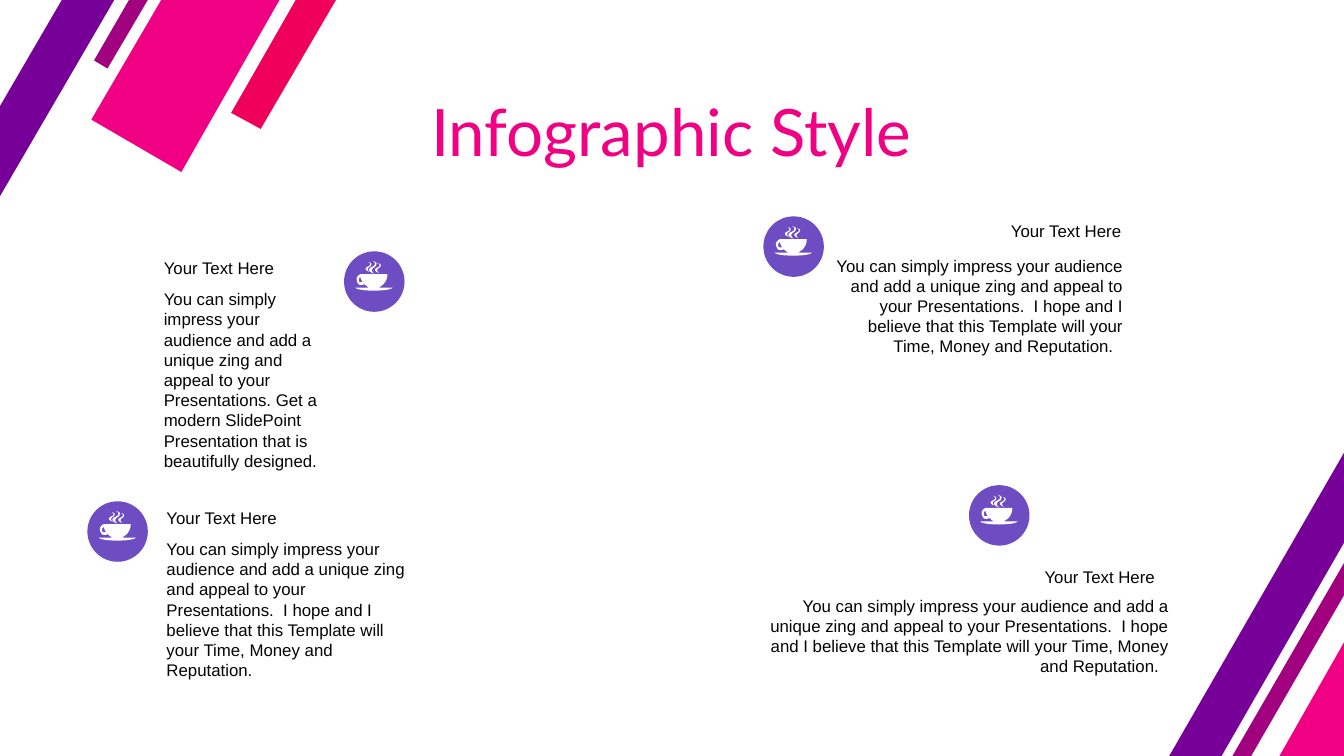
"""Build the "Infographic Style" slide: four captions with cup badges and diagonal stripes."""
from typing import NamedTuple

from pptx import Presentation
from pptx.dml.color import RGBColor
from pptx.enum.shapes import MSO_SHAPE as Shape
from pptx.enum.text import MSO_ANCHOR as Anchor, PP_ALIGN as Align
from pptx.util import Inches, Pt

WIDTH = 10
HEIGHT = WIDTH * 9 / 16
PINK, PURPLE, PLUM, RED = "F00082", "770099", "A1007E", "EF005A"
VIOLET, WHITE, INK = "6E4CC2", "FFFFFF", "040404"
BADGE_SIZE = 0.45
CURVE_STEPS = 6
HEADING = "Your Text Here"
PITCH = "You can simply impress your audience and add a unique zing and appeal to your Presentations."
HOPE = f"{PITCH}  I hope and I believe that this Template will your Time, Money and Reputation."
DESIGN = f"{PITCH} Get a modern SlidePoint  Presentation that is beautifully designed."


class Frame(NamedTuple):
    left: float
    top: float
    width: float
    height: float


class Caption(NamedTuple):
    badge: tuple
    heading: Frame
    body: Frame
    text: str
    align: Align


class Stripe(NamedTuple):
    color: str
    corners: list


class Outline(NamedTuple):
    start: tuple
    segments: list


CAPTIONS = [
    Caption((2.56, 1.87), Frame(1.12, 1.87, 1.45, 0.25), Frame(1.12, 2.1, 1.45, 1.46), DESIGN, Align.LEFT),
    Caption((0.65, 3.73), Frame(1.14, 3.73, 1.99, 0.25), Frame(1.14, 3.96, 1.99, 1.16), HOPE, Align.LEFT),
    Caption((5.68, 1.61), Frame(6.1, 1.59, 2.34, 0.25), Frame(6.1, 1.85, 2.35, 0.86), HOPE + "  ", Align.RIGHT),
    Caption((7.21, 3.61), Frame(6.44, 4.17, 2.25, 0.25), Frame(5.56, 4.38, 3.23, 0.71), HOPE + "  ", Align.RIGHT),
]

STRIPES = [
    Stripe(RED, [(2.2, 0), (2.5, 0), (1.94, 0.96), (1.72, 0.84)]),
    Stripe(PINK, [(1.2, 0), (2.08, 0), (1.35, 1.28), (0.68, 0.89)]),
    Stripe(PLUM, [(0.96, 0), (1.1, 0), (0.8, 0.51), (0.7, 0.45)]),
    Stripe(PURPLE, [(0.46, 0), (0.85, 0), (0, 1.46), (0, 0.79)]),
    Stripe(PINK, [(WIDTH, 4.78), (WIDTH, HEIGHT), (9.52, HEIGHT)]),
    Stripe(PLUM, [(WIDTH, 4.19), (WIDTH, 4.43), (9.31, HEIGHT), (9.17, HEIGHT)]),
    Stripe(PURPLE, [(WIDTH, 3.37), (WIDTH, 4.04), (9.09, HEIGHT), (8.7, HEIGHT)]),
]

HANDLE = Outline((12, 19), [
    (13, 21, 13, 22, 14, 23), (13, 23, 13, 23, 12, 23),
    (11, 23, 11, 22, 11, 21), (11, 20, 12, 19, 12, 19)])
BOWL = Outline((12.3, 17), [
    (10.8, 17.5, 9.8, 18.8, 9.4, 20), (9.2, 22, 10, 24, 11.5, 25),
    (13, 25.3, 14, 25, 15, 24.5), (16, 25, 16.5, 25.7, 17, 26),
    (17.7, 26.5, 18.3, 27, 19, 27), (8.3, 27),
    (9, 28.3, 15, 29.3, 22.2, 29.3), (29.5, 29.3, 35.5, 28.3, 36.2, 27),
    (25.4, 27), (26, 27, 26.8, 26.5, 27.3, 26), (30, 24.5, 32.3, 21, 32.3, 17)])
WISP = Outline((0, 0), [
    (1, 0.5, 1.5, 0.7, 1.4, 1.9), (1.1, 3.5, -2.1, 3.2, -2, 5.2),
    (-1.3, 6.2, -1, 6.6, 0.9, 7.2), (0, 6.4, -0.4, 6, -0.3, 5.2),
    (-0.3, 3.6, 2.1, 3.7, 2.2, 2), (2.7, 1, 1.8, 0.4, 0, 0)])
WISP_PLACES = [(25, 8.8, 1), (18, 8, 1), (21.2, 7.2, 1.3)]


def rgb(color: str) -> RGBColor:
    return RGBColor.from_string(color)


def paint(shape, color: str) -> None:
    shape.shadow.inherit = False
    shape.fill.solid()
    shape.fill.fore_color.rgb = rgb(color)
    shape.line.fill.background()


def flatten(outline: Outline) -> list:
    points = [outline.start]
    for segment in outline.segments:
        if len(segment) == 2:
            points.append(segment)
            continue
        (x0, y0), (x1, y1, x2, y2, x3, y3) = points[-1], segment
        for step in range(1, CURVE_STEPS + 1):
            t = step / CURVE_STEPS
            a, b, c, d = (1 - t) ** 3, 3 * t * (1 - t) ** 2, 3 * t * t * (1 - t), t ** 3
            points.append((a * x0 + b * x1 + c * x2 + d * x3, a * y0 + b * y1 + c * y2 + d * y3))
    return points


def add_polygons(page, polygons: list, color: str) -> None:
    contours = [[(Inches(x), Inches(y)) for x, y in polygon] for polygon in polygons]
    builder = page.shapes.build_freeform(*contours[0][0])
    for index, contour in enumerate(contours):
        if index:
            builder.move_to(*contour[0])
        builder.add_line_segments(contour[1:], close=True)
    paint(builder.convert_to_shape(), color)


def add_badge(page, left: float, top: float) -> None:
    size = Inches(BADGE_SIZE)
    paint(page.shapes.add_shape(Shape.OVAL, Inches(left), Inches(top), size, size), VIOLET)
    contours = [flatten(HANDLE), flatten(BOWL)]
    wisp = flatten(WISP)
    contours += [[(dx + x * scale, dy + y * scale) for x, y in wisp] for dx, dy, scale in WISP_PLACES]
    cup = [[(left + x / 100, top + y / 100) for x, y in contour] for contour in contours]
    add_polygons(page, cup, WHITE)


def add_text(page, frame: Frame, text: str, align: Align, font: str = "Arial",
             size: float = 9, color: str = INK):
    box = page.shapes.add_textbox(*(Inches(length) for length in frame))
    box.text_frame.word_wrap = True
    box.text_frame.vertical_anchor = Anchor.TOP
    para = box.text_frame.paragraphs[0]
    para.text = text
    para.alignment = align
    para.font.name = font
    para.font.size = Pt(size)
    para.font.color.rgb = rgb(color)
    return box


def add_title(page, text: str) -> None:
    box = add_text(page, Frame(0.77, 0.69, 8.45, 0.55), text, Align.CENTER, "Lato", 35, PINK)
    box.text_frame.margin_top = box.text_frame.margin_bottom = Inches(0.1)
    box.text_frame.paragraphs[0].line_spacing = 0.8


def main() -> None:
    deck = Presentation()
    deck.slide_width, deck.slide_height = Inches(WIDTH), Inches(HEIGHT)
    page = deck.slides.add_slide(deck.slide_layouts[6])
    add_title(page, "Infographic Style")
    for caption in CAPTIONS:
        add_text(page, caption.body, caption.text, caption.align)
        add_text(page, caption.heading, HEADING, caption.align)
        add_badge(page, *caption.badge)
    for stripe in STRIPES:
        add_polygons(page, [stripe.corners], stripe.color)
    deck.save("out.pptx")


if __name__ == "__main__":
    main()
